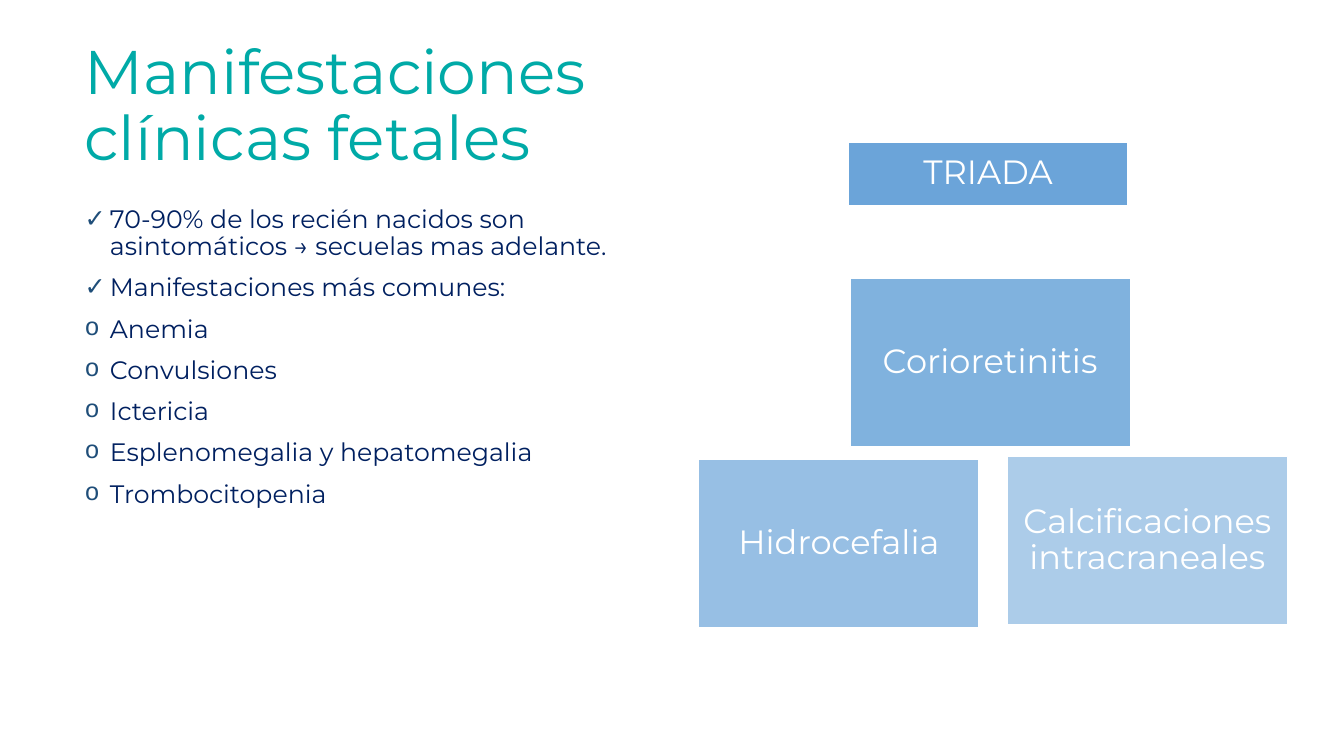
"""Build the slide on clinical manifestations in the fetus and its triad."""
from lxml import etree
from pptx import Presentation
from pptx.dml.color import RGBColor
from pptx.enum.shapes import MSO_SHAPE
from pptx.enum.text import MSO_ANCHOR, MSO_AUTO_SIZE, PP_ALIGN
from pptx.oxml.ns import qn
from pptx.util import Inches, Pt

RECT = MSO_SHAPE.RECTANGLE
TOP, MIDDLE = MSO_ANCHOR.TOP, MSO_ANCHOR.MIDDLE
LEFT, CENTER = PP_ALIGN.LEFT, PP_ALIGN.CENTER
NO_FIT = MSO_AUTO_SIZE.NONE

TITLE = "Manifestaciones clínicas fetales"
FINDINGS = [
    ("✓", "70-90% de los recién nacidos son asintomáticos → secuelas mas adelante."),
    ("✓", "Manifestaciones más comunes:"),
    ("o", "Anemia"),
    ("o", "Convulsiones"),
    ("o", "Ictericia"),
    ("o", "Esplenomegalia y hepatomegalia"),
    ("o", "Trombocitopenia"),
]
BOX_WIDTH, HEADER_HEIGHT, SIGN_HEIGHT = 2.78, 0.63, 1.67
TRIAD = [
    ("TRIADA", 8.41, 1.41, HEADER_HEIGHT, 90),
    ("Corioretinitis", 8.43, 2.76, SIGN_HEIGHT, 77),
    ("Hidrocefalia", 6.93, 4.56, SIGN_HEIGHT, 63),
    ("Calcificaciones intracraneales", 9.99, 4.53, SIGN_HEIGHT, 50),
]

THEME = {
    "title": {"size": 44, "color": "00AAA7"},
    "body": {"size": 18, "color": "002060"},
    "box": {"size": 24, "color": "FFFFFF"},
    "font": "Montserrat",
    "bullet": "1F4E79",
    "bullet_fonts": {"✓": "Arial", "o": "Courier New"},
    "fill": "5B9BD5",
    "line": "FFFFFF",
}


def set_all(target, values):
    """Set every attribute named in a dict."""
    for name, value in values.items():
        setattr(target, name, value)


def place(sp, *box):
    """Move and size a shape, in inches."""
    set_all(sp, dict(zip(("left", "top", "width", "height"), map(Inches, box))))


def write(p, text, style, **layout):
    """Put one styled run in a paragraph."""
    set_all(p, {"line_spacing": 0.9, "space_before": Pt(0), **layout})
    r = p.add_run()
    r.text = text
    set_all(r.font, {"name": THEME["font"], "size": Pt(THEME[style]["size"])})
    r.font.color.rgb = RGBColor.from_string(THEME[style]["color"])


def add_bullet(p, char):
    """Give a paragraph a hanging, coloured bullet."""
    pPr = p._p.get_or_add_pPr()
    indent = Inches(0.25)
    pPr.set("marL", str(indent))
    pPr.set("indent", str(-indent))
    color = etree.SubElement(pPr, qn("a:buClr"))
    etree.SubElement(color, qn("a:srgbClr"), val=THEME["bullet"])
    etree.SubElement(pPr, qn("a:buFont"), typeface=THEME["bullet_fonts"][char])
    etree.SubElement(pPr, qn("a:buChar"), char=char)


def add_box(s, text, left, top, height, opacity):
    """Draw one translucent box of the triad."""
    sp = s.shapes.add_shape(RECT, *map(Inches, (left, top, BOX_WIDTH, height)))
    sp.shadow.inherit = False
    sp.fill.solid()
    sp.fill.fore_color.rgb = RGBColor.from_string(THEME["fill"])
    color = sp._element.spPr.find(qn("a:solidFill"))[0]
    etree.SubElement(color, qn("a:alpha"), val=str(opacity * 1000))
    sp.line.color.rgb = RGBColor.from_string(THEME["line"])
    sp.line.width = Pt(1)
    tf = sp.text_frame
    sides = ("left", "top", "right", "bottom")
    set_all(tf, {f"margin_{side}": Inches(0.1) for side in sides})
    set_all(tf, {"word_wrap": True, "vertical_anchor": MIDDLE})
    write(tf.paragraphs[0], text, "box", alignment=CENTER)


def main():
    """Assemble and save the slide."""
    prs = Presentation()
    set_all(prs, {"slide_width": Inches(13.33), "slide_height": Inches(7.5)})
    s = prs.slides.add_slide(prs.slide_layouts[1])

    title, body = s.shapes.title, s.placeholders[1]
    place(title, 0.74, 0.34, 6.67, 1.45)
    set_all(title.text_frame, {"auto_size": NO_FIT, "vertical_anchor": MIDDLE})
    write(title.text_frame.paragraphs[0], TITLE, "title", alignment=LEFT)

    place(body, 0.74, 2, 5.67, 4.76)
    tf = body.text_frame
    set_all(tf, {"auto_size": NO_FIT, "vertical_anchor": TOP})
    for i, (char, text) in enumerate(FINDINGS):
        p = tf.add_paragraph() if i else tf.paragraphs[0]
        add_bullet(p, char)
        write(p, text, "body", space_before=Pt(10 if i else 0))

    for box in TRIAD:
        add_box(s, *box)
    prs.save("out.pptx")


if __name__ == "__main__":
    main()
